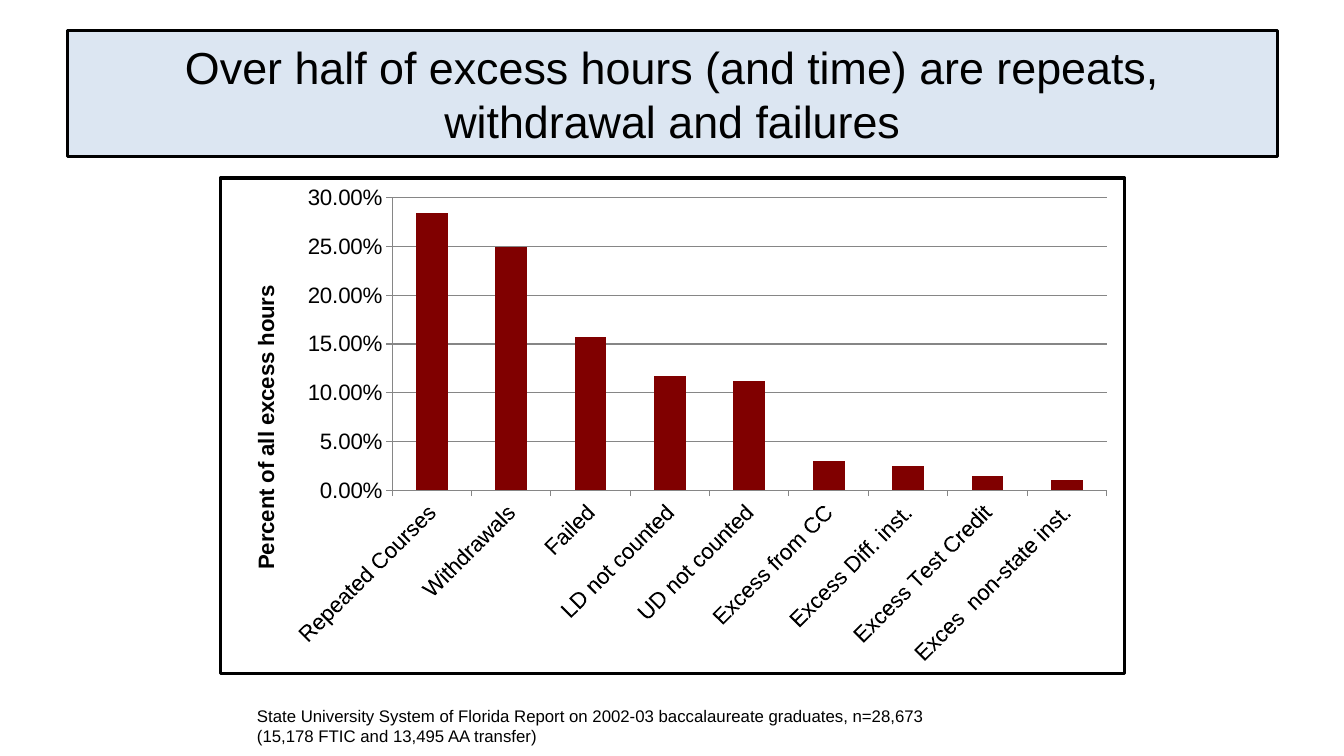
from dataclasses import dataclass

from lxml.etree import SubElement
from pptx import Presentation
from pptx.chart.data import CategoryChartData
from pptx.dml.color import RGBColor as RGB
from pptx.enum.chart import XL_CHART_TYPE as ChartType, XL_TICK_MARK as Tick
from pptx.enum.text import MSO_ANCHOR as Anchor, PP_ALIGN as Align
from pptx.oxml import parse_xml
from pptx.oxml.ns import nsdecls, qn
from pptx.util import Inches, Pt

# Content
TITLE = "Over half of excess hours (and time) are repeats, withdrawal and failures"
AXIS_TITLE = "Percent of all excess hours"
HOURS = {
    "Repeated Courses": 0.284,
    "Withdrawals": 0.249,
    "Failed": 0.157,
    "LD not counted": 0.117,
    "UD not counted": 0.112,
    "Excess from CC": 0.03,
    "Excess Diff. inst.": 0.025,
    "Excess Test Credit": 0.015,
    "Exces  non-state inst.": 0.01,
}
SOURCE = [
    "State University System of Florida Report on 2002-03 baccalaureate graduates, n=28,673",
    "(15,178 FTIC and 13,495 AA transfer)",
]


@dataclass(frozen=True)
class Theme:
    font: str = "Arial"
    ink: RGB = RGB(0, 0, 0)
    panel: RGB = RGB(0xDC, 0xE6, 0xF2)
    bar: RGB = RGB(0x80, 0, 0)
    grid: RGB = RGB(0x86, 0x86, 0x86)
    title_size: int = 32
    chart_size: int = 16
    source_size: int = 12
    border: float = 2.25


THEME = Theme()


def style(font, size, bold=False):
    font.name, font.size, font.bold = THEME.font, Pt(size), bold
    font.color.rgb = THEME.ink


def set_layout(parent, index, **settings):
    """Fix a chart part at fractions of the chart's size."""
    for old in parent.findall(qn("c:layout")):
        parent.remove(old)
    layout = parse_xml(f"<c:layout {nsdecls('c')}><c:manualLayout/></c:layout>")
    for name, value in settings.items():
        SubElement(layout[0], qn(f"c:{name}"), val=str(value))
    parent.insert(index, layout)


def add_title(page):
    box = page.shapes.title
    box.left, box.top, box.width, box.height = map(Inches, (0.67, 0.3, 12, 1.25))
    box.fill.solid()
    box.fill.fore_color.rgb = THEME.panel
    box.line.color.rgb = THEME.ink
    box.line.width = Pt(THEME.border)
    frame = box.text_frame
    frame.text = TITLE
    frame.vertical_anchor = Anchor.MIDDLE
    para = frame.paragraphs[0]
    para.alignment = Align.CENTER
    style(para.font, THEME.title_size)


def add_hours_chart(page):
    data = CategoryChartData(number_format="0.00%")
    data.categories = list(HOURS)
    data.add_series("Series 1", list(HOURS.values()))
    place = map(Inches, (2.17, 1.75, 9, 4.95))
    chart = page.shapes.add_chart(ChartType.COLUMN_CLUSTERED, *place, data).chart
    chart.has_title = chart.has_legend = False
    style(chart.font, THEME.chart_size)

    # Bars
    plot = chart.plots[0]
    plot.gap_width = 150
    plot.vary_by_categories = False
    fill = plot.series[0].format.fill
    fill.solid()
    fill.fore_color.rgb = THEME.bar

    # Axes
    category, value = chart.category_axis, chart.value_axis
    for axis in (category, value):
        axis.major_tick_mark, axis.minor_tick_mark = Tick.OUTSIDE, Tick.NONE
        axis.format.line.color.rgb = THEME.grid
        style(axis.tick_labels.font, THEME.chart_size)
    value.minimum_scale, value.maximum_scale, value.major_unit = 0, 0.3, 0.05
    value.tick_labels.number_format = "0.00%"
    value.tick_labels.number_format_is_linked = False
    value.has_major_gridlines = True
    value.major_gridlines.format.line.color.rgb = THEME.grid
    frame = value.axis_title.text_frame
    frame.text = AXIS_TITLE
    style(frame.paragraphs[0].font, THEME.chart_size, bold=True)

    # Slanted category labels and upright axis title
    body = chart.element.find(qn("c:chart"))
    plot_area = body.find(qn("c:plotArea"))
    axis_title = plot_area.find(qn("c:valAx")).find(qn("c:title"))
    labels = plot_area.find(qn("c:catAx")).find(qn("c:txPr"))
    for part, degrees in ((labels, -45), (axis_title, -90)):
        text_body = part.find(".//" + qn("a:bodyPr"))
        text_body.set("rot", str(degrees * 60000))
        text_body.set("vert", "horz")

    # Positions inside the chart, and its border
    set_layout(axis_title, 1, xMode="edge", yMode="edge", x=0.03, y=0.21)
    set_layout(plot_area, 0, layoutTarget="inner", xMode="edge", yMode="edge",
               x=0.19, y=0.04, w=0.79, h=0.59)
    body.addnext(parse_xml(
        f"<c:spPr {nsdecls('c', 'a')}><a:noFill/><a:ln w=\"{Pt(THEME.border)}\">"
        f"<a:solidFill><a:srgbClr val=\"{THEME.ink}\"/></a:solidFill></a:ln></c:spPr>"))


def add_source(page):
    box = page.shapes.add_textbox(*map(Inches, (2.45, 6.95, 6.89, 0.5)))
    frame = box.text_frame
    frame.word_wrap = False
    frame.text = "\n".join(SOURCE)
    for para in frame.paragraphs:
        style(para.font, THEME.source_size)


def main():
    deck = Presentation()
    deck.slide_width, deck.slide_height = Inches(13.33), Inches(7.5)
    page = deck.slides.add_slide(deck.slide_layouts[5])
    add_title(page)
    add_hours_chart(page)
    add_source(page)
    deck.save("out.pptx")


if __name__ == "__main__":
    main()
